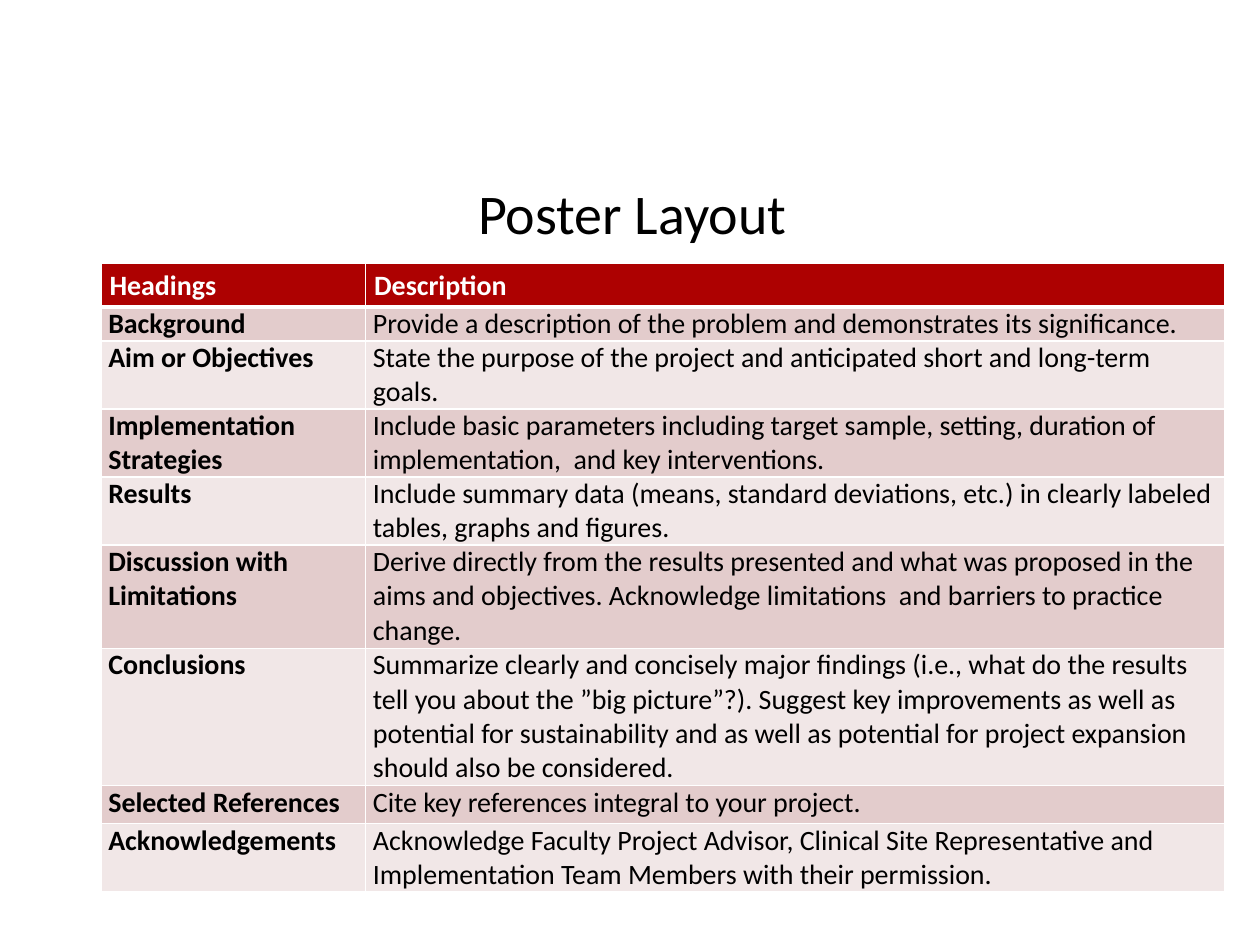
from lxml import etree
from pptx import Presentation
from pptx.dml.color import RGBColor
from pptx.enum.text import MSO_ANCHOR, PP_ALIGN
from pptx.oxml.ns import qn
from pptx.util import Inches, Pt

MIDDLE = MSO_ANCHOR.MIDDLE
CENTER = PP_ALIGN.CENTER
FONT = "Calibri"
WHITE, BLACK, RED = "FFFFFF", "000000", "AD0101"
BANDS = ["F1E7E7", "E3CCCC"]

TITLE = "Poster Layout"
ROWS = [
    (0.34, "Headings", "Description"),
    (0.27, "Background", "Provide a description of the problem and demonstrates its significance."),
    (0.54, "Aim or Objectives", "State the purpose of the project and anticipated short and long-term goals."),
    (0.54, "Implementation Strategies",
     "Include basic parameters including target sample, setting, duration of "
     "implementation,  and key interventions."),
    (0.54, "Results",
     "Include summary data (means, standard deviations, etc.) in clearly labeled "
     "tables, graphs and figures."),
    (0.82, "Discussion with Limitations",
     "Derive directly from the results presented and what was proposed in the aims "
     "and objectives. Acknowledge limitations  and barriers to practice change."),
    (1.09, "Conclusions",
     "Summarize clearly and concisely major findings (i.e., what do the results tell "
     "you about the ”big picture”?). Suggest key improvements as well as potential for "
     "sustainability and as well as potential for project expansion should also be considered."),
    (0.3, "Selected References", "Cite key references integral to your project."),
    (0.54, "Acknowledgements",
     "Acknowledge Faculty Project Advisor, Clinical Site Representative and "
     "Implementation Team Members with their permission."),
]
COLS = [2.1, 6.82]


def color(text):
    return RGBColor.from_string(text)


def style(para, size, tone, bold=False):
    font = para.font
    font.name, font.size, font.bold = FONT, Pt(size), bold
    font.color.rgb = color(tone)


def border(cell, widths):
    props = cell._tc.get_or_add_tcPr()
    for spot, (side, width) in enumerate(widths.items()):
        line = etree.Element(qn("a:ln" + side), w=str(Pt(width)))
        fill = etree.SubElement(line, qn("a:solidFill"))
        etree.SubElement(fill, qn("a:srgbClr"), val=WHITE)
        props.insert(spot, line)


def fill_cell(cell, text, row, col):
    head = row == 0
    cell.text = text
    style(cell.text_frame.paragraphs[0], 16, WHITE if head else BLACK, head or col == 0)
    cell.margin_left = cell.margin_right = Inches(0.07 if head else 0.06)
    cell.margin_top = cell.margin_bottom = Inches(0.04 if head else 0)
    cell.fill.solid()
    cell.fill.fore_color.rgb = color(RED if head else BANDS[row % 2])
    border(cell, {"L": 1, "R": 1, "T": 3 if row == 1 else 1, "B": 3 if head else 1})


def main():
    deck = Presentation()
    deck.slide_width, deck.slide_height = Inches(10), Inches(7.5)
    slide = deck.slides.add_slide(deck.slide_layouts[6])

    box = slide.shapes.add_textbox(Inches(0.57), Inches(1.06), Inches(8.9), Inches(1.25))
    frame = box.text_frame
    frame.word_wrap = True
    frame.vertical_anchor = MIDDLE
    frame.text = TITLE
    title = frame.paragraphs[0]
    title.alignment = CENTER
    style(title, 32, BLACK)

    high = sum(row[0] for row in ROWS)
    table = slide.shapes.add_table(
        len(ROWS), len(COLS), Inches(0.8), Inches(2.09), Inches(sum(COLS)), Inches(high)
    ).table
    for col, width in enumerate(COLS):
        table.columns[col].width = Inches(width)
    for row, (height, *texts) in enumerate(ROWS):
        table.rows[row].height = Inches(height)
        for col, text in enumerate(texts):
            fill_cell(table.cell(row, col), text, row, col)

    deck.save("out.pptx")


if __name__ == "__main__":
    main()
